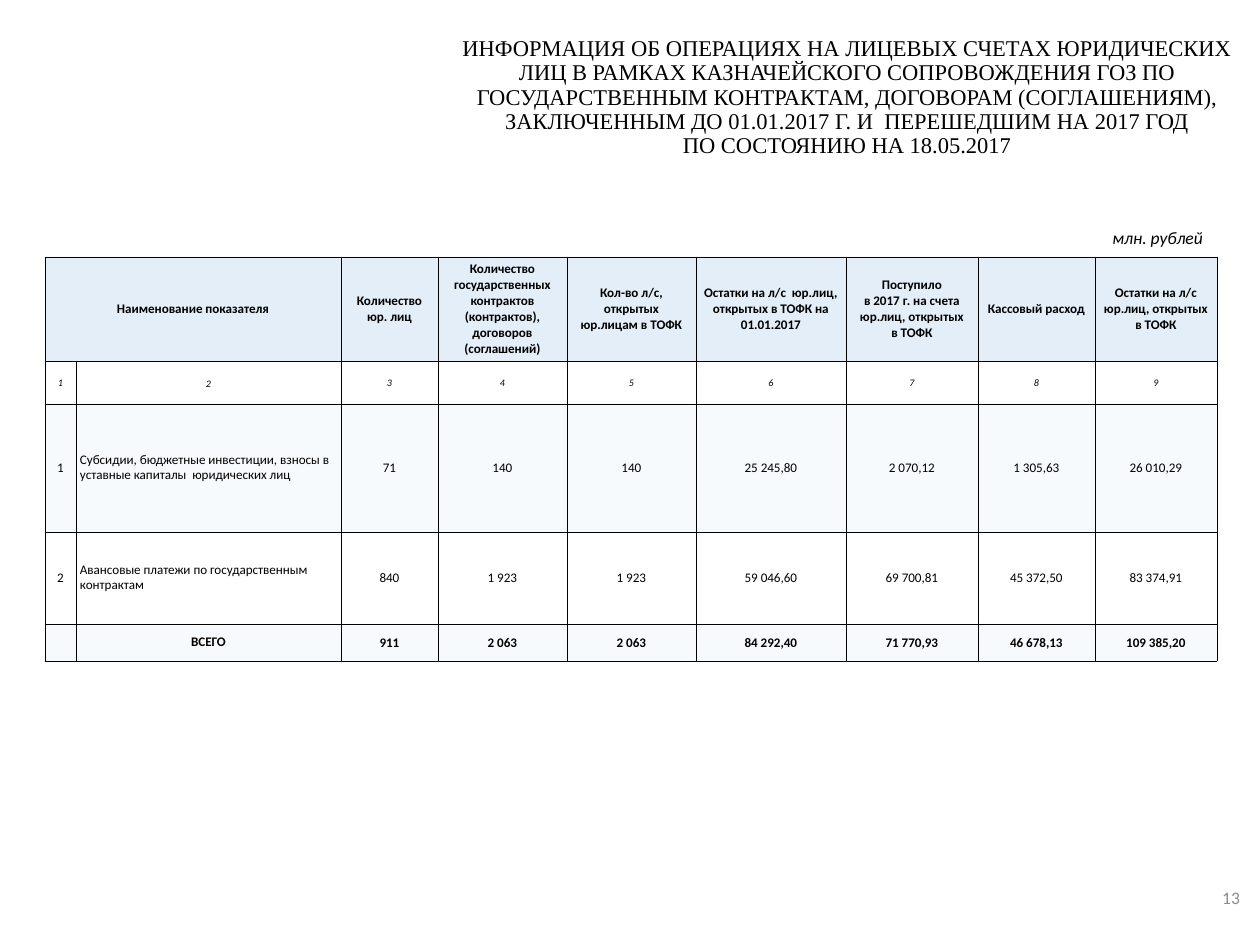
from lxml import etree
from pptx import Presentation
from pptx import util as u
from pptx.dml.color import RGBColor
from pptx.enum import text
from pptx.oxml import ns

PX = 914400 // 90
BLACK = RGBColor(0, 0, 0)
GREY = RGBColor(0x8C, 0x8C, 0x8C)
WHITE = RGBColor(255, 255, 255)
BLUE = RGBColor(0xDE, 0xEB, 0xF7)
CENTER, RIGHT, LEFT = text.PP_ALIGN.CENTER, text.PP_ALIGN.RIGHT, text.PP_ALIGN.LEFT
MIDDLE, TOP = text.MSO_ANCHOR.MIDDLE, text.MSO_ANCHOR.TOP


def write(frame, content, align, spacing, **font):
    for index, line in enumerate(content.split("\n")):
        para = frame.add_paragraph() if index else frame.paragraphs[0]
        para.alignment = align
        para.line_spacing = spacing
        span = para.add_run()
        span.text = line
        span.font.color.rgb = font.get("color", BLACK)
        for name, value in font.items():
            if name != "color":
                setattr(span.font, name, value)


def place(box, bounds, anchor, fit):
    for name, value in zip(("left", "top", "width", "height"), bounds):
        setattr(box, name, value * PX)
    settings = {
        "word_wrap": True, "auto_size": fit, "vertical_anchor": anchor,
        "margin_left": 11 * PX, "margin_right": 11 * PX,
        "margin_top": 5 * PX, "margin_bottom": 5 * PX,
    }
    for name, value in settings.items():
        setattr(box.text_frame, name, value)


deck = Presentation()
deck.slide_width, deck.slide_height = 1260 * PX, 945 * PX
page = deck.slides.add_slide(deck.slide_layouts[5])

title = page.shapes.title
place(title, (434, 32, 826, 133), TOP, text.MSO_AUTO_SIZE.SHAPE_TO_FIT_TEXT)
write(
    title.text_frame,
    "ИНФОРМАЦИЯ ОБ ОПЕРАЦИЯХ НА ЛИЦЕВЫХ СЧЕТАХ ЮРИДИЧЕСКИХ ЛИЦ В РАМКАХ "
    "КАЗНАЧЕЙСКОГО СОПРОВОЖДЕНИЯ ГОЗ ПО ГОСУДАРСТВЕННЫМ КОНТРАКТАМ, ДОГОВОРАМ "
    "(СОГЛАШЕНИЯМ), ЗАКЛЮЧЕННЫМ ДО 01.01.2017 Г. И  ПЕРЕШЕДШИМ НА 2017 ГОД\n"
    "ПО СОСТОЯНИЮ НА 18.05.2017",
    CENTER, 0.9, name="Times New Roman", size=u.Pt(18),
)

columns = [31, 265, 97, 129, 129, 150, 132, 117, 122]
heights = [104, 43, 128, 92, 37]
rows = [
    ["Наименование показателя", "", "Количество\nюр. лиц",
     "Количество государственных контрактов (контрактов), договоров (соглашений)",
     "Кол-во л/с, открытых юр.лицам в ТОФК",
     "Остатки на л/с  юр.лиц, открытых в ТОФК на 01.01.2017",
     "Поступило\nв 2017 г. на счета юр.лиц, открытых\nв ТОФК",
     "Кассовый расход", "Остатки на л/с юр.лиц, открытых в ТОФК"],
    [str(number) for number in range(1, 10)],
    ["1", "Субсидии, бюджетные инвестиции, взносы в уставные капиталы  юридических лиц",
     "71", "140", "140", "25 245,80", "2 070,12", "1 305,63", "26 010,29"],
    ["2", "Авансовые платежи по государственным контрактам",
     "840", "1 923", "1 923", "59 046,60", "69 700,81", "45 372,50", "83 374,91"],
    ["", "ВСЕГО", "911", "2 063", "2 063", "84 292,40", "71 770,93", "46 678,13",
     "109 385,20"],
]
plain = {"size": u.Pt(10.5), "bold": False, "italic": False}
bold = {**plain, "bold": True}
row_styles = [
    (BLUE, 81, bold),
    (WHITE, 100, {"size": u.Pt(8), "bold": False, "italic": True}),
    (BLUE, 23, plain),
    (WHITE, 100, plain),
    (BLUE, 23, bold),
]

table = page.shapes.add_table(
    len(rows), len(columns), 45 * PX, 257 * PX, sum(columns) * PX, sum(heights) * PX
).table
table.first_row = table.horz_banding = False
for column, width in zip(table.columns, columns):
    column.width = width * PX
for row, height in zip(table.rows, heights):
    row.height = height * PX
table.cell(0, 0).merge(table.cell(0, 1))

for r, (values, (color, opacity, font)) in enumerate(zip(rows, row_styles)):
    for c, value in enumerate(values):
        cell = table.cell(r, c)
        is_label = c == 1 and r in (2, 3)
        side = 7 if r == 0 else 4 if is_label else 1
        settings = {
            "margin_left": side * PX, "margin_right": side * PX,
            "margin_top": 0 if r == 0 else PX, "margin_bottom": 0,
            "vertical_anchor": MIDDLE,
        }
        for name, setting in settings.items():
            setattr(cell, name, setting)
        cell.fill.solid()
        cell.fill.fore_color.rgb = color
        properties = cell._tc.get_or_add_tcPr()
        if opacity < 100:
            tint = properties.find(".//" + ns.qn("a:srgbClr"))
            etree.SubElement(tint, ns.qn("a:alpha"), val=str(opacity * 1000))
        for index, edge in enumerate(("lnL", "lnR", "lnT", "lnB")):
            line = etree.Element(ns.qn("a:" + edge), w=str(u.Pt(0.25)))
            fill = etree.SubElement(line, ns.qn("a:solidFill"))
            etree.SubElement(fill, ns.qn("a:srgbClr"), val=str(BLACK))
            properties.insert(index, line)
        if value:
            spacing = u.Pt(12) if c == 1 and r else None
            align = LEFT if is_label else CENTER
            write(cell.text_frame, value, align, spacing, name="Calibri", **font)

labels = [
    ("млн. рублей", (1084, 222, 130, 32), TOP,
     text.MSO_AUTO_SIZE.SHAPE_TO_FIT_TEXT, BLACK, True),
    ("13", (968, 873, 283, 50), MIDDLE, text.MSO_AUTO_SIZE.NONE, GREY, False),
]
for content, bounds, anchor, fit, color, italic in labels:
    box = page.shapes.add_textbox(0, 0, 0, 0)
    place(box, bounds, anchor, fit)
    write(box.text_frame, content, RIGHT, None,
          name="Calibri", size=u.Pt(14), italic=italic, color=color)

deck.save("out.pptx")
